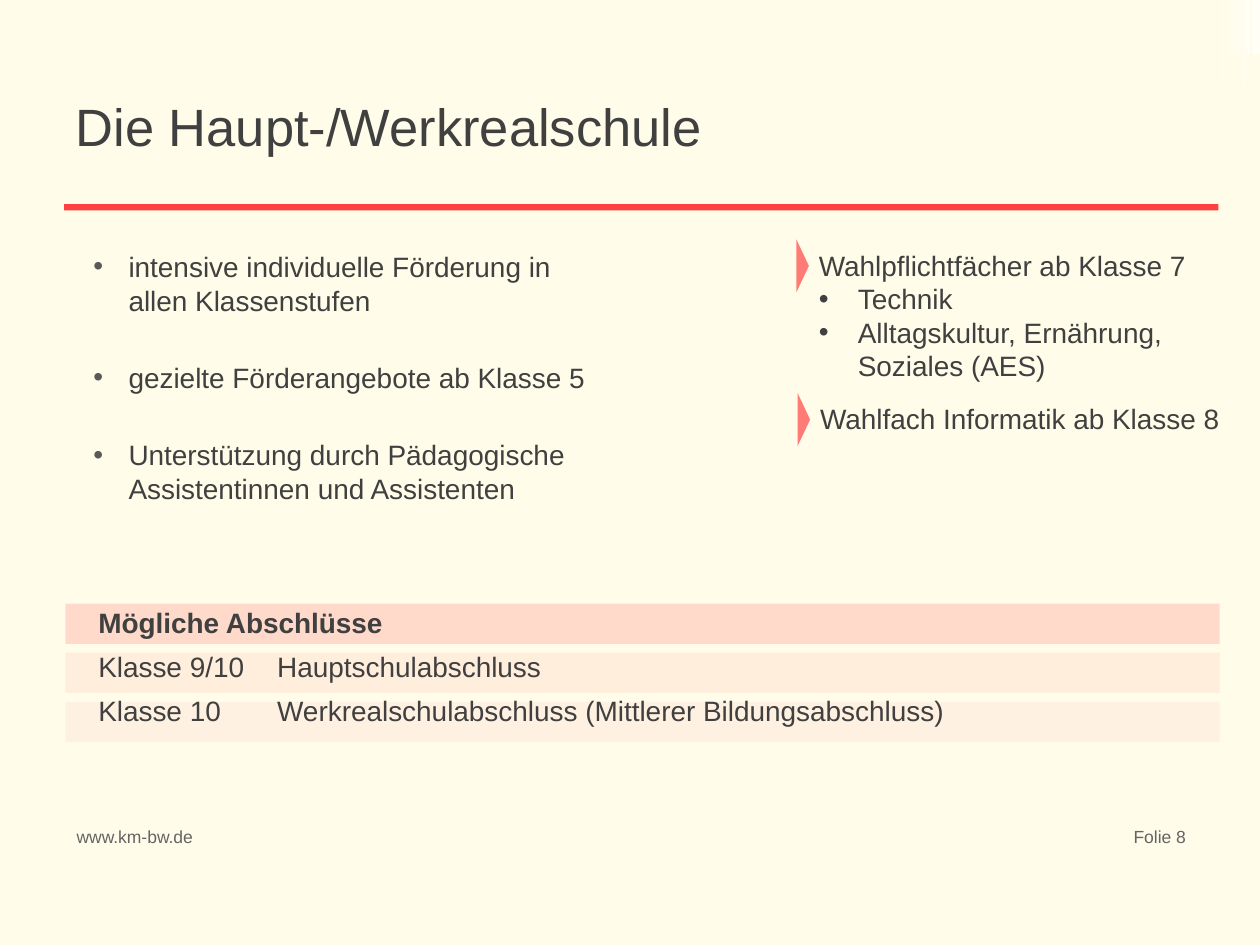
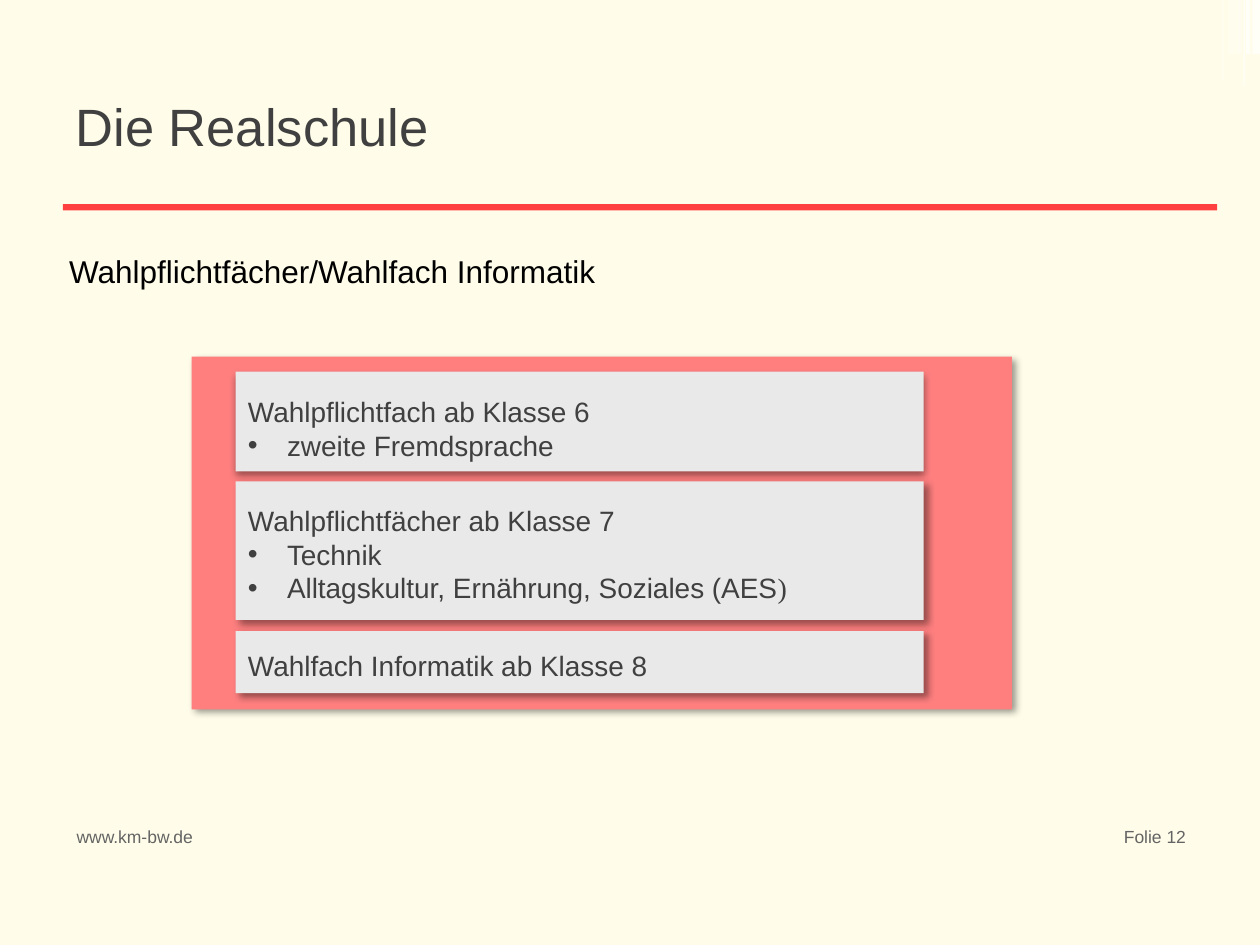
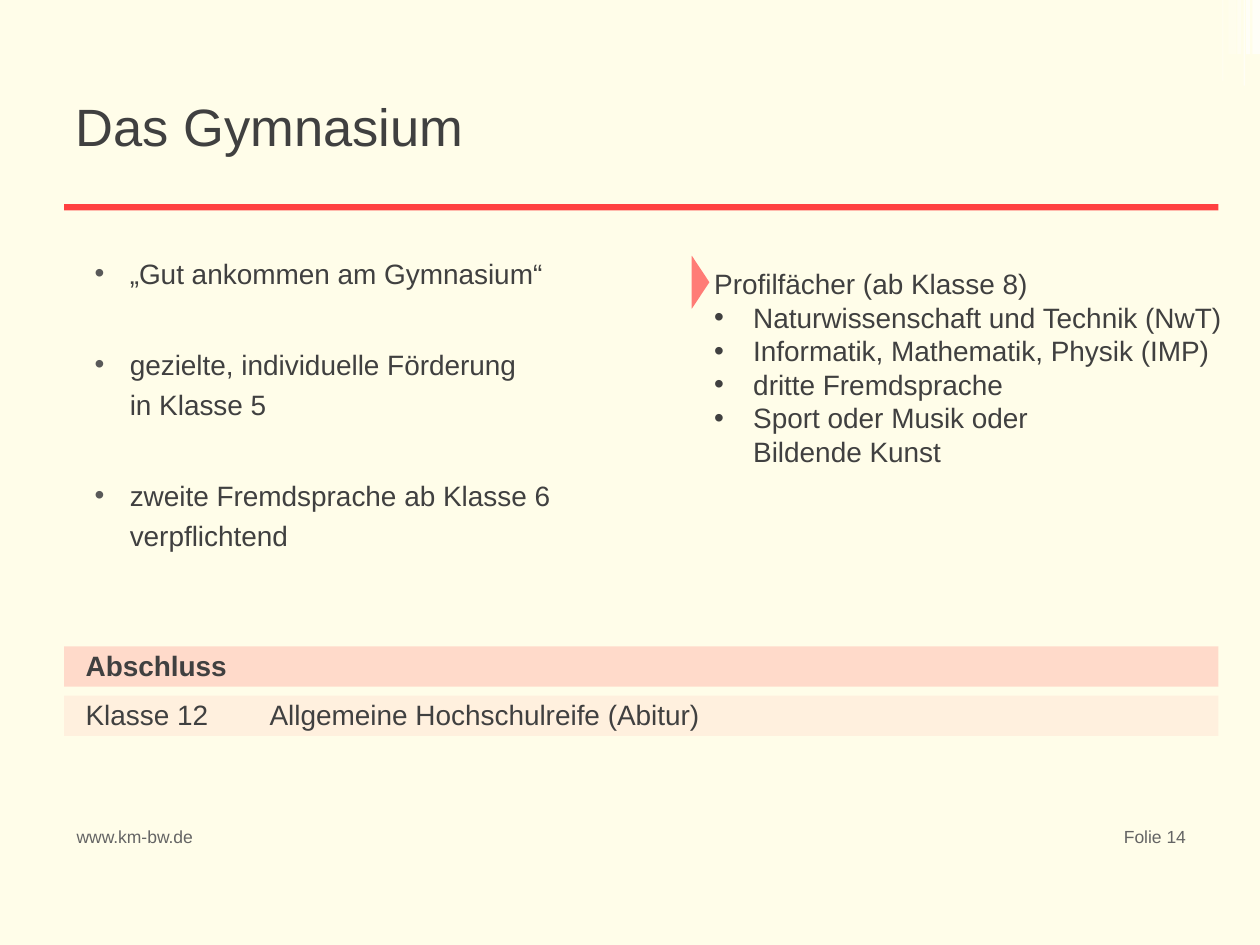
from lxml import etree
from pptx import Presentation
from pptx.dml.color import RGBColor
from pptx.enum.shapes import MSO_SHAPE
from pptx.enum.text import MSO_ANCHOR, MSO_AUTO_SIZE, PP_ALIGN
from pptx.oxml.ns import qn
from pptx.util import Inches, Pt

RECT, ROUND, ARROW = MSO_SHAPE.RECTANGLE, MSO_SHAPE.ROUNDED_RECTANGLE, MSO_SHAPE.PENTAGON
TOP, MIDDLE = MSO_ANCHOR.TOP, MSO_ANCHOR.MIDDLE
LEFT, RIGHT = PP_ALIGN.LEFT, PP_ALIGN.RIGHT
NO_FIT = MSO_AUTO_SIZE.NONE

CREAM, WHITE, RED, ROSE, GREY = "FFFDE9", "FFFFFF", "FF4040", "FF7F7F", "E9E9E9"
TEXT, MUTED, BULLET, BLACK = "404040", "646464", "595959", "000000"
FONT = "Arial"
PLAIN_TABLE = "{2D5ABB26-0587-4C30-8999-92F81FD0307C}"
TITLE_ONLY, TITLE_BODY = 5, 1

# left, width, height, opacity of the pale stripes in the top right corner
STRIPES = [(9.89, 0.03, 0.43, 65), (9.94, 0.06, 0.43, 65), (9.7, 0.01, 0.64, 30),
           (9.87, 0.01, 0.68, 60), (9.75, 0.06, 0.43, 20), (9.82, 0.03, 0.43, 40)]


def rgb(value):
    return RGBColor.from_string(value)


def inches(*values):
    return [Inches(v) for v in values]


def format_run(r, size=16, color=TEXT, bold=False, font=FONT):
    r.font.size, r.font.bold, r.font.name = Pt(size), bold, font
    r.font.color.rgb = rgb(color)


def add_text(tf, text, align=LEFT, before=0, spacing=1.0, hang=None, indent=0.31,
             bullet_color=None, size=16, **run_format):
    """Add one paragraph, bulleted if hang is given; a vertical tab breaks the line."""
    p = tf.paragraphs[0] if not tf.paragraphs[0].runs else tf.add_paragraph()
    p.text = text
    p.alignment, p.space_before, p.line_spacing = align, Pt(before), spacing
    if hang:
        pPr = p._p.get_or_add_pPr()
        pPr.set("marL", str(Inches(indent)))
        pPr.set("indent", str(-Inches(hang)))
        if bullet_color:
            color = etree.SubElement(pPr, qn("a:buClr"))
            etree.SubElement(color, qn("a:srgbClr"), val=bullet_color)
        etree.SubElement(pPr, qn("a:buFont"), typeface=FONT)
        etree.SubElement(pPr, qn("a:buChar"), char="•")
    for r in p.runs:
        format_run(r, size, **run_format)
    for br in p._p.findall(qn("a:br")):
        etree.SubElement(br, qn("a:rPr"), sz=str(size * 100))
    return p


def add_shape(slide, kind, box, fill=None, alpha=None, adj=None, anchor=TOP):
    sp = slide.shapes.add_shape(kind, *inches(*box))
    sp.shadow.inherit = False
    sp.line.fill.background()
    if fill:
        sp.fill.solid()
        sp.fill.fore_color.rgb = rgb(fill)
    else:
        sp.fill.background()
    if alpha:
        color = sp._element.spPr.find(".//" + qn("a:srgbClr"))
        etree.SubElement(color, qn("a:alpha"), val=str(alpha * 1000))
    if adj is not None:
        sp.adjustments[0] = adj
    sp.text_frame.word_wrap = True
    sp.text_frame.vertical_anchor = anchor
    return sp


def add_shadow(sp, blur=4, dist=3, angle=45):
    effects = sp._element.spPr.find(qn("a:effectLst"))
    shadow = etree.SubElement(effects, qn("a:outerShdw"), blurRad=str(Pt(blur)),
                              dist=str(Pt(dist)), dir=str(angle * 60000),
                              algn="tl", rotWithShape="0")
    color = etree.SubElement(shadow, qn("a:srgbClr"), val=BLACK)
    etree.SubElement(color, qn("a:alpha"), val="40000")


def add_label(slide, box, text, wrap=True, **fmt):
    tf = slide.shapes.add_textbox(*inches(*box)).text_frame
    tf.word_wrap = wrap
    add_text(tf, text, **fmt)


def place(sp, box):
    sp.left, sp.top, sp.width, sp.height = inches(*box)


def add_slide(prs, layout, title, number, rule_left=0.51):
    """Add a slide with title, red rule, corner stripes and footer."""
    slide = prs.slides.add_slide(prs.slide_layouts[layout])
    for left, width, height, alpha in STRIPES:
        add_shape(slide, RECT, (left, 0, width, height), WHITE, alpha)
    add_shape(slide, RECT, (rule_left, 1.62, 9.16, 0.05), RED)
    place(slide.shapes.title, (0.5, 0.61, 9, 0.77))
    tf = slide.shapes.title.text_frame
    tf.auto_size, tf.vertical_anchor = NO_FIT, MIDDLE
    add_text(tf, title, size=30)
    add_label(slide, (0.51, 6.51, 1.33, 0.39), "www.km-bw.de", size=10, color=MUTED)
    add_label(slide, (8.54, 6.51, 0.97, 0.39), f"Folie {number}", align=RIGHT,
              size=10, color=MUTED)
    return slide


def fill_body(slide, box, items, gap, spacing=1.0):
    body = slide.placeholders[1]
    place(body, box)
    tf = body.text_frame
    tf.auto_size, tf.margin_right = NO_FIT, Inches(0.55)
    for i, item in enumerate(items):
        add_text(tf, item, before=gap if i else 0, spacing=spacing, hang=0.28,
                 indent=0.4, bullet_color=BULLET)


def add_subjects(slide, box, heading, items=(), spacing=1.0, **shape_format):
    """Add a box with a heading line and a bulleted list of subjects."""
    sp = add_shape(slide, ROUND, box, adj=0, **shape_format)
    add_text(sp.text_frame, heading, spacing=spacing)
    for item in items:
        add_text(sp.text_frame, item, hang=0.31)
    return sp


def add_marker(slide, left, top, width=0.1):
    add_shape(slide, ARROW, (left, top, width, 0.42), RED, 68, adj=0.99)


def add_degrees(slide, left, top, bands, inset, columns, row_height, heading, rows):
    """Add tinted bands and, over them, the table of school-leaving degrees."""
    for i, (color, alpha) in enumerate(bands):
        add_shape(slide, RECT, (left, top + i * 0.39, 9.16, 0.32), color, alpha)
    count = len(rows) + 1
    frame = slide.shapes.add_table(count, 2, *inches(left + inset, top, sum(columns),
                                                     count * row_height))
    table = frame.table
    table.first_row = table.horz_banding = False
    table._tbl.tblPr.find(qn("a:tableStyleId")).text = PLAIN_TABLE
    for column, width in zip(table.columns, columns):
        column.width = Inches(width)
    for i, values in enumerate([(heading, "")] + rows):
        table.rows[i].height = Inches(row_height)
        for cell, value in zip(table.rows[i].cells, values):
            cell.fill.background()
            cell.margin_top = cell.margin_bottom = Inches(0.04)
            if value:
                add_text(cell.text_frame, value, bold=i == 0)
    table.cell(0, 0).merge(table.cell(0, 1))


def werkrealschule(prs):
    slide = add_slide(prs, TITLE_BODY, "Die Haupt-/Werkrealschule", 8)
    fill_body(slide, (0.52, 1.93, 4.72, 2.68),
              ["intensive individuelle Förderung in allen Klassenstufen",
               "gezielte Förderangebote ab Klasse 5",
               "Unterstützung durch Pädagogische Assistentinnen und Assistenten"], gap=25)
    add_subjects(slide, (6.4, 1.92, 3.25, 1.65), "Wahlpflichtfächer ab Klasse 7",
                 ["Technik", "Alltagskultur, Ernährung, Soziales (AES)"])
    add_subjects(slide, (6.41, 3.14, 3.59, 1.65), "Wahlfach Informatik ab Klasse 8")
    add_marker(slide, 6.32, 1.9)
    add_marker(slide, 6.33, 3.12)
    add_degrees(slide, 0.52, 4.79, [(RED, 18), ("FF6D6D", 10), ("FFBFBF", 18)],
                0.16, (1.42, 7.08), 0.35, "Mögliche Abschlüsse",
                [("Klasse 9/10", "Hauptschulabschluss"),
                 ("Klasse 10", "Werkrealschulabschluss (Mittlerer Bildungsabschluss)")])


def realschule(prs):
    slide = add_slide(prs, TITLE_ONLY, "Die Realschule", 12, rule_left=0.5)
    add_label(slide, (0.45, 1.95, 4.49, 0.4), "Wahlpflichtfächer/Wahlfach Informatik",
              wrap=False, size=18, color=BLACK)
    left, top = 1.52, 2.83
    add_shadow(add_shape(slide, ROUND, (left, top, 6.51, 2.8), ROSE, adj=0))
    cards = [
        (0.12, 0.79, 1.4, "Wahlpflichtfach ab Klasse 6", ["zweite Fremdsprache"]),
        (0.99, 1.1, 1.2, "Wahlpflichtfächer ab Klasse 7",
         ["Technik", "Alltagskultur, Ernährung, Soziales (AES"]),
        (2.18, 0.49, 1.2, "Wahlfach Informatik ab Klasse 8", []),
    ]
    shapes = [add_subjects(slide, (left + 0.35, top + dy, 5.46, height), heading, items,
                           spacing, fill=GREY, anchor=MIDDLE)
              for dy, height, spacing, heading, items in cards]
    r = shapes[1].text_frame.paragraphs[-1].add_run()
    r.text = ")"
    format_run(r, font="Times New Roman")
    add_shadow(shapes[0], dist=2, angle=90)
    for sp in shapes[1:]:
        add_shadow(sp)


def gymnasium(prs):
    slide = add_slide(prs, TITLE_BODY, "Das Gymnasium", 14)
    fill_body(slide, (0.53, 1.93, 4.88, 2.91),
              ["„Gut ankommen am Gymnasium“",
               "gezielte, individuelle Förderung\vin Klasse 5",
               "zweite Fremdsprache ab Klasse 6 verpflichtend"], gap=29, spacing=1.2)
    add_marker(slide, 5.49, 2.03, width=0.14)
    add_subjects(slide, (5.57, 2.01, 4.43, 1.81), "Profilfächer (ab Klasse 8)",
                 ["Naturwissenschaft und Technik (NwT)",
                  "Informatik, Mathematik, Physik (IMP)",
                  "dritte Fremdsprache",
                  "Sport oder Musik oder\vBildende Kunst"], anchor=MIDDLE)
    add_degrees(slide, 0.51, 5.13, [(RED, 18), (ROSE, 10)], 0.07, (1.46, 6.97), 0.39,
                "Abschluss", [("Klasse 12", "Allgemeine Hochschulreife (Abitur)")])


def main():
    prs = Presentation()
    prs.slide_width, prs.slide_height = inches(10, 7.5)
    background = prs.slide_master.background.fill
    background.solid()
    background.fore_color.rgb = rgb(CREAM)
    werkrealschule(prs)
    realschule(prs)
    gymnasium(prs)
    prs.save("out.pptx")


if __name__ == "__main__":
    main()
